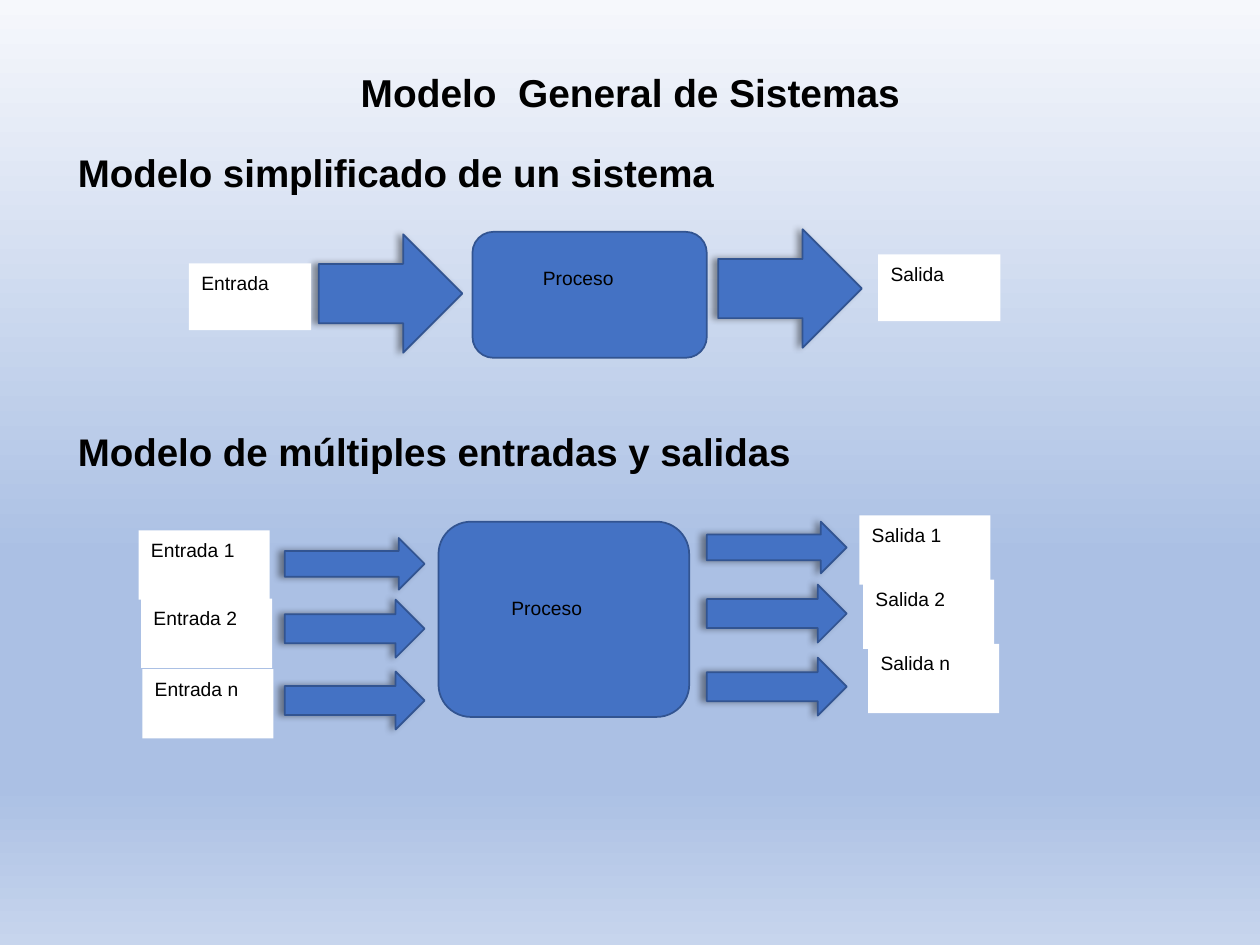
from lxml.etree import SubElement
from pptx import Presentation
from pptx.dml.color import RGBColor
from pptx.enum.shapes import MSO_SHAPE
from pptx.enum.text import MSO_ANCHOR, PP_ALIGN
from pptx.oxml.ns import qn
from pptx.util import Inches, Pt

THEME = {
    "font": "Arial", "ink": "000000", "box": "FFFFFF",
    "fill": "4472C4", "edge": "325491",
    "title": 22.2, "head": 22, "label": 11,
    "back": [(0, "F6F8FC"), (59, "ABC0E4"), (83, "ABC0E4"), (100, "C7D5ED")],
}

TITLE = ("Modelo  General de Sistemas", (2.61, 0.54, 4.79, 0.6))
HEADS = [
    ("Modelo de múltiples entradas y salidas", (0.52, 3.35, 6.44, 0.47)),
    ("Modelo simplificado de un sistema", (0.52, 1.13, 5.58, 0.47)),
]
MODELS = [
    {
        "block": (3.75, 1.84, 1.86, 1),
        "name": ("Proceso", (4.21, 2.05, 0.97, 0.53)),
        "size": (0.97, 0.53),
        "boxes": [("Entrada", 1.5, 2.09), ("Salida", 6.97, 2.02)],
        "width": 1.14,
        "arrows": [(2.53, [(1.86, 0.94)]), (5.7, [(1.82, 0.94)])],
    },
    {
        "block": (3.48, 4.14, 1.99, 1.55),
        "name": ("Proceso", (3.96, 4.67, 1.25, 0.53)),
        "size": (1.04, 0.55),
        "boxes": [
            ("Entrada 1", 1.1, 4.21), ("Entrada 2", 1.12, 4.75),
            ("Entrada n", 1.13, 5.31), ("Salida 1", 6.82, 4.09),
            ("Salida 2", 6.85, 4.6), ("Salida n", 6.89, 5.11),
        ],
        "width": 1.11,
        "arrows": [
            (2.26, [(4.27, 0.41), (4.76, 0.46), (5.33, 0.46)]),
            (5.61, [(4.14, 0.41), (4.64, 0.46), (5.22, 0.46)]),
        ],
    },
]


def color(key):
    return RGBColor.from_string(THEME[key])


def place(area):
    return [Inches(n) for n in area]


def write(shape, text, size, bold=False, align=PP_ALIGN.LEFT):
    frame = shape.text_frame
    frame.word_wrap = True
    frame.vertical_anchor = MSO_ANCHOR.TOP
    frame.text = text
    para = frame.paragraphs[0]
    para.alignment = align
    font = para.runs[0].font
    font.name = THEME["font"]
    font.size = Pt(THEME[size])
    font.bold = bold
    font.color.rgb = color("ink")
    return para


def label(shape, text):
    para = write(shape, text, "label")
    para.line_spacing = 1.07
    para.space_after = Pt(8)


def draw(group, kind, area, fill="fill", edge=True):
    shape = group.shapes.add_shape(kind, *place(area))
    shape.shadow.inherit = False
    shape.fill.solid()
    shape.fill.fore_color.rgb = color(fill)
    if edge:
        shape.line.color.rgb = color("edge")
        shape.line.width = Pt(1)
    else:
        shape.line.fill.background()
    return shape


def shade(shape):
    effect = shape.element.spPr.find(qn("a:effectLst"))
    outer = SubElement(effect, qn("a:outerShdw"), blurRad=str(Pt(4)),
                       dist=str(Pt(3)), dir="10800000", rotWithShape="0")
    tint = SubElement(outer, qn("a:srgbClr"), val=THEME["ink"])
    SubElement(tint, qn("a:alpha"), val="40000")


def paint(slide):
    fill = slide.background.fill
    fill.gradient()
    fill.gradient_angle = 270
    stops = next(slide.element.iter(qn("a:gsLst")))
    for stop in list(stops):
        stops.remove(stop)
    for spot, tone in THEME["back"]:
        stop = SubElement(stops, qn("a:gs"), pos=str(spot * 1000))
        SubElement(stop, qn("a:srgbClr"), val=tone)


def build(slide, model):
    group = slide.shapes.add_group_shape()
    draw(group, MSO_SHAPE.ROUNDED_RECTANGLE, model["block"])
    text, area = model["name"]
    label(group.shapes.add_textbox(*place(area)), text)
    for left, rows in model["arrows"]:
        for top, height in rows:
            area = (left, top, model["width"], height)
            shade(draw(group, MSO_SHAPE.RIGHT_ARROW, area))
    for text, left, top in model["boxes"]:
        area = (left, top, *model["size"])
        label(draw(group, MSO_SHAPE.RECTANGLE, area, "box", False), text)


def main():
    deck = Presentation()
    deck.slide_width, deck.slide_height = Inches(10), Inches(7.5)
    slide = deck.slides.add_slide(deck.slide_layouts[6])
    paint(slide)
    text, area = TITLE
    box = slide.shapes.add_textbox(*place(area))
    write(box, text, "title", True, PP_ALIGN.CENTER).line_spacing = 0.9
    for text, area in HEADS:
        write(slide.shapes.add_textbox(*place(area)), text, "head", True)
    for model in MODELS:
        build(slide, model)
    deck.save("out.pptx")


if __name__ == "__main__":
    main()
